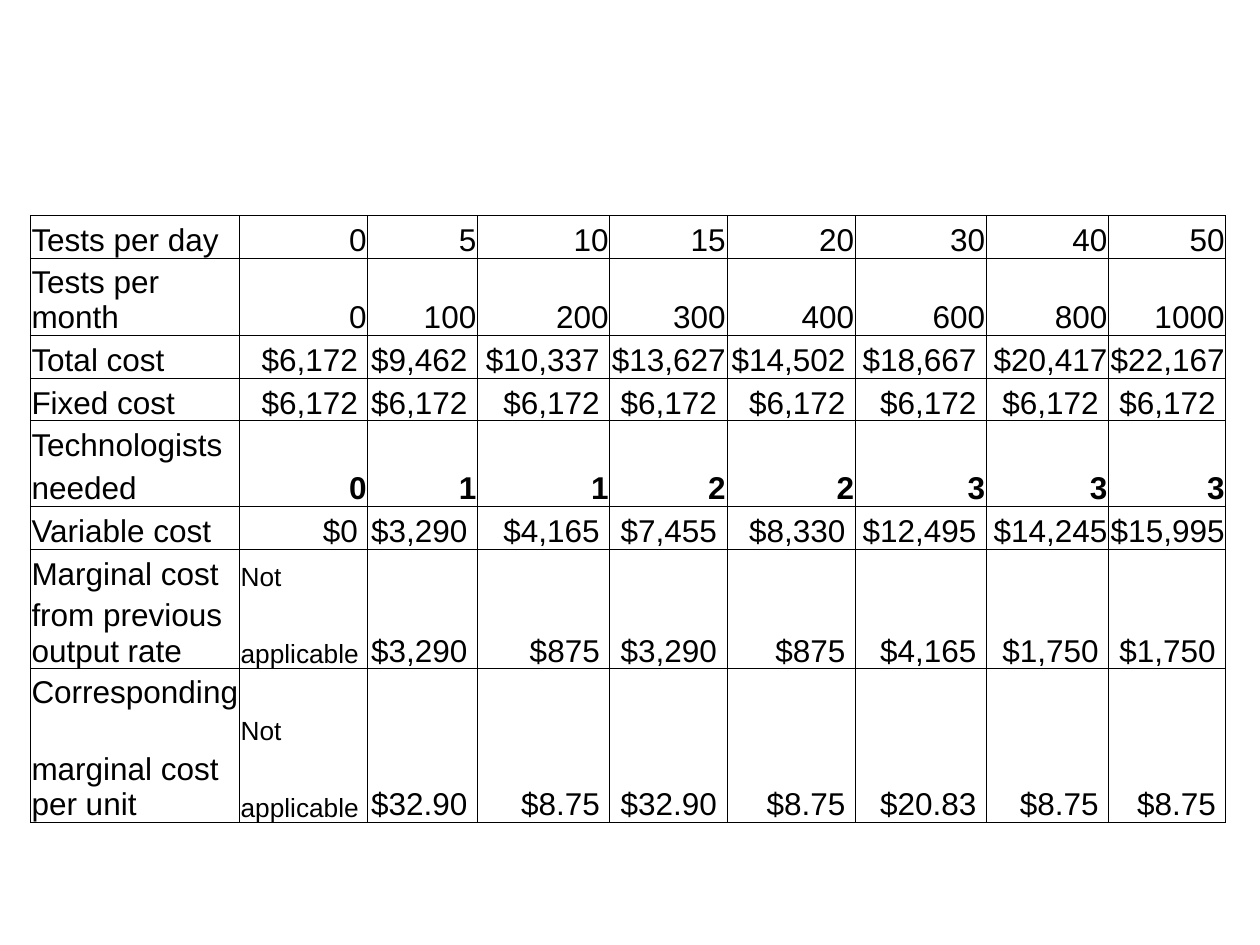
from lxml.etree import SubElement
from pptx import Presentation
from pptx.dml.color import RGBColor
from pptx.enum.text import MSO_ANCHOR as Anchor, PP_ALIGN as Align
from pptx.oxml.ns import qn
from pptx.util import Inches, Pt

BLACK = RGBColor(0, 0, 0)
HARD_SPACE = chr(160)

# Each line of the table: label, then the values for the eight output rates
ROWS = [
    ("Tests per day", "0 5 10 15 20 30 40 50"),
    ("Tests per month", "0 100 200 300 400 600 800 1000"),
    ("Total cost", "$6,172 $9,462 $10,337 $13,627 $14,502 $18,667 $20,417 $22,167"),
    ("Fixed cost", "$6,172 $6,172 $6,172 $6,172 $6,172 $6,172 $6,172 $6,172"),
    ("Technologists", "0 1 1 2 2 3 3 3"),
    ("needed", ""),
    ("Variable cost", "$0 $3,290 $4,165 $7,455 $8,330 $12,495 $14,245 $15,995"),
    ("Marginal cost", "Not $3,290 $875 $3,290 $875 $4,165 $1,750 $1,750"),
    ("from previous output rate", "applicable"),
    ("Corresponding", "Not $32.90 $8.75 $32.90 $8.75 $20.83 $8.75 $8.75"),
    ("marginal cost\nper unit", "applicable"),
]
WIDTHS = [1.66, 1.02, 0.87, 1.05, 0.93, 1.02, 1.04, 0.97, 0.93]
HEIGHTS = [0.34, 0.61] + [0.34] * 6 + [0.61] * 3
# Upper row of each split pair: first column whose cells are merged
PAIRS = {4: 1, 7: 2, 9: 2}
BOLD_ROW = 4


def draw_edges(cell, hidden):
    """Give the cell thin black edges, except the sides named in hidden."""
    props = cell._tc.get_or_add_tcPr()
    for pos, side in enumerate("LRTB"):
        line = SubElement(props, qn(f"a:ln{side}"), w=str(Pt(0.5)))
        if side in hidden:
            SubElement(line, qn("a:noFill"))
        else:
            fill = SubElement(line, qn("a:solidFill"))
            SubElement(fill, qn("a:srgbClr"), val=str(BLACK))
        props.insert(pos, line)


deck = Presentation()
deck.slide_width, deck.slide_height = Inches(10), Inches(7.5)
slide = deck.slides.add_slide(deck.slide_layouts[6])

frame = slide.shapes.add_table(
    len(ROWS), len(WIDTHS), Inches(0.24), Inches(1.71),
    Inches(sum(WIDTHS)), Inches(sum(HEIGHTS)))
table = frame.table
table.first_row = table.horz_banding = False
for col, width in zip(table.columns, WIDTHS):
    col.width = Inches(width)
for row, height in zip(table.rows, HEIGHTS):
    row.height = Inches(height)

for top, first in PAIRS.items():
    for c in range(first, len(WIDTHS)):
        table.cell(top, c).merge(table.cell(top + 1, c))

for r, (label, values) in enumerate(ROWS):
    texts = [label] + values.split()
    texts += [""] * (len(WIDTHS) - len(texts))
    for c, text in enumerate(texts):
        cell = table.cell(r, c)
        cell.fill.background()
        cell.vertical_anchor = Anchor.BOTTOM
        cell.margin_left = cell.margin_right = cell.margin_top = Inches(0.01)
        cell.margin_bottom = 0

        hidden = ""
        if c < PAIRS.get(r, 0):
            hidden = "B"
        elif c < PAIRS.get(r - 1, 0):
            hidden = "T"
        draw_edges(cell, hidden)
        if cell.is_spanned:
            continue

        note = c == 1 and text.isalpha()
        if text.startswith("$"):
            text += " "
        elif hidden == "B" and r != BOLD_ROW:
            text += HARD_SPACE
        cell.text = text
        for para in cell.text_frame.paragraphs:
            para.alignment = Align.LEFT if c == 0 or note else Align.RIGHT
            para.font.name = "Arial"
            para.font.size = Pt(15 if note else 18)
            para.font.bold = r == BOLD_ROW and c > 0
            para.font.color.rgb = BLACK

deck.save("out.pptx")
